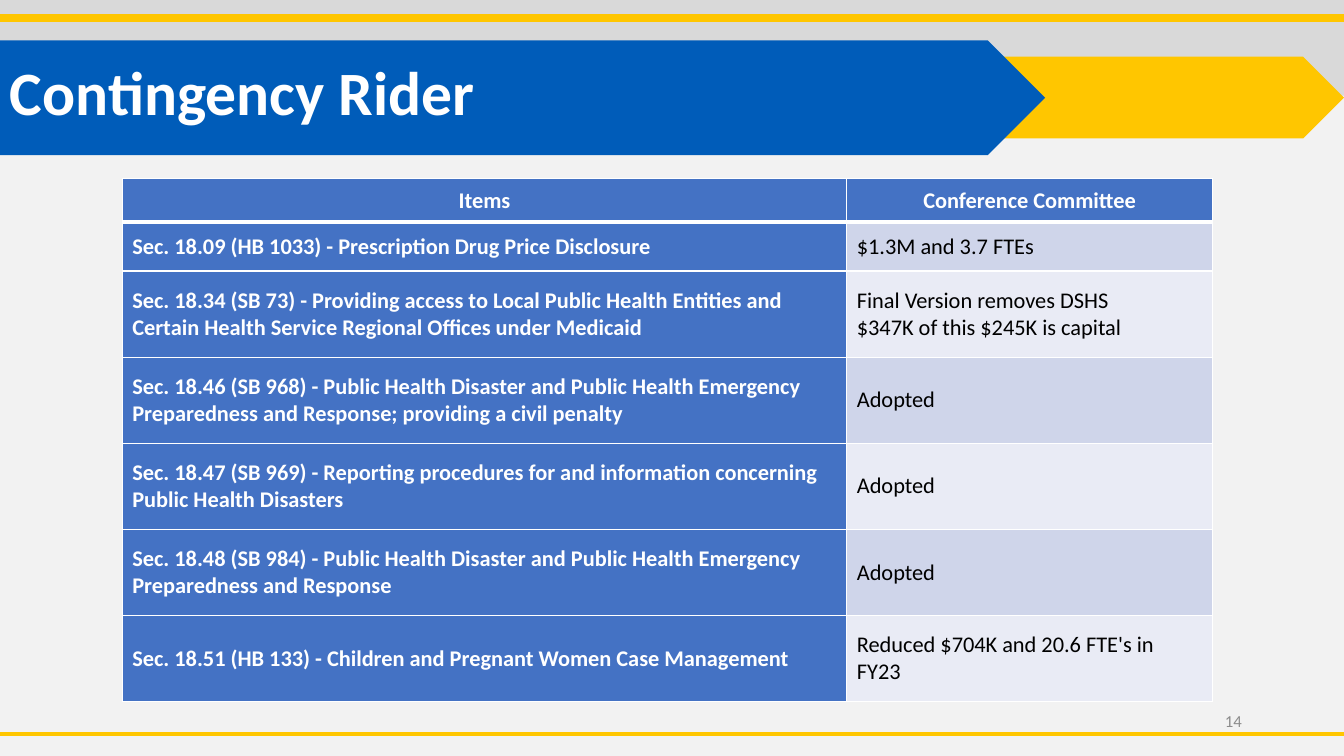
from lxml import etree
from pptx import Presentation
from pptx.dml import color
from pptx.enum import shapes, text
from pptx.oxml import ns
from pptx.util import Cm, Pt

WHITE, BLACK, GOLD, BLUE = "FFFFFF", "000000", "FFC600", "005CB9"
PALE, GREY, NUMBER_GREY = "F2F2F2", "D9D9D9", "8C8C8C"
HEADER, BANDS = "4472C4", ("CFD5EA", "E9EBF5")
WIDTH, HEIGHT = 33.87, 19.05
COLUMN_WIDTHS = (18.26, 9.22)
ROW_HEIGHTS = (1.09, 1.24) + (2.17,) * 5
HEADINGS = ("Items", "Conference Committee")
RIDERS = (
    ("Sec. 18.09 (HB 1033) - Prescription Drug Price Disclosure",
     "$1.3M and 3.7 FTEs"),
    ("Sec. 18.34 (SB 73) - Providing access to Local Public Health Entities and "
     "Certain Health Service Regional Offices under Medicaid",
     "Final Version removes DSHS\n$347K of this $245K is capital"),
    ("Sec. 18.46 (SB 968) - Public Health Disaster and Public Health Emergency "
     "Preparedness and Response; providing a civil penalty",
     "Adopted"),
    ("Sec. 18.47 (SB 969) - Reporting procedures for and information concerning "
     "Public Health Disasters",
     "Adopted"),
    ("Sec. 18.48 (SB 984) - Public Health Disaster and Public Health Emergency "
     "Preparedness and Response",
     "Adopted"),
    ("Sec. 18.51 (HB 133) - Children and Pregnant Women Case Management",
     "Reduced $704K and 20.6 FTE's in FY23"),
)


def paint(target, colour):
    target.solid()
    target.fore_color.rgb = color.RGBColor.from_string(colour)


def write(frame, words, size, colour, bold=False, align=text.PP_ALIGN.LEFT):
    frame.text = words
    frame.word_wrap = True
    for paragraph in frame.paragraphs:
        paragraph.alignment = align
        for run in paragraph.runs:
            run.font.name = "Calibri"
            run.font.size = Pt(size)
            run.font.bold = bold
            paint(run.font.fill, colour)


def add_band(slide, kind, left, top, width, height, colour):
    band = slide.shapes.add_shape(kind, Cm(left), Cm(top), Cm(width), Cm(height))
    band.shadow.inherit = False
    paint(band.fill, colour)
    band.line.fill.background()


def add_rule(slide, y, weight):
    rule = slide.shapes.add_connector(
        shapes.MSO_CONNECTOR.STRAIGHT, Cm(0), Cm(y), Cm(WIDTH), Cm(y))
    paint(rule.line.fill, GOLD)
    rule.line.width = Pt(weight)
    etree.SubElement(rule._element.spPr, ns.qn("a:effectLst"))


def add_label(slide, left, top, width, height, words, size, colour, **style):
    label = slide.shapes.add_textbox(Cm(left), Cm(top), Cm(width), Cm(height))
    frame = label.text_frame
    write(frame, words, size, colour, **style)
    frame.vertical_anchor = text.MSO_ANCHOR.MIDDLE
    return frame


def add_borders(cell, bottom):
    properties = cell._tc.get_or_add_tcPr()
    weights = {"lnL": 1, "lnR": 1, "lnT": 1, "lnB": bottom}
    for position, (side, weight) in enumerate(weights.items()):
        edge = etree.Element(ns.qn(f"a:{side}"), w=str(Pt(weight)))
        fill = etree.SubElement(edge, ns.qn("a:solidFill"))
        etree.SubElement(fill, ns.qn("a:srgbClr"), val=WHITE)
        properties.insert(position, edge)


def fill_cell(cell, words, fill, colour, bold, align=text.PP_ALIGN.LEFT, bottom=1):
    write(cell.text_frame, words, 16, colour, bold, align)
    cell.vertical_anchor = text.MSO_ANCHOR.MIDDLE
    paint(cell.fill, fill)
    add_borders(cell, bottom)


def add_riders(slide):
    riders = slide.shapes.add_table(
        len(ROW_HEIGHTS), len(COLUMN_WIDTHS), Cm(3.08), Cm(4.5),
        Cm(sum(COLUMN_WIDTHS)), Cm(sum(ROW_HEIGHTS))).table
    for column, width in zip(riders.columns, COLUMN_WIDTHS):
        column.width = Cm(width)
    for row, height in zip(riders.rows, ROW_HEIGHTS):
        row.height = Cm(height)
    for column, heading in enumerate(HEADINGS):
        cell = riders.cell(0, column)
        fill_cell(cell, heading, HEADER, WHITE, True, text.PP_ALIGN.CENTER, 3)
        cell.margin_left = cell.margin_right = cell.margin_top = Cm(0.03)
        cell.margin_bottom = Cm(0)
    for row, (item, decision) in enumerate(RIDERS, 1):
        fill_cell(riders.cell(row, 0), item, HEADER, WHITE, True,
                  bottom=1)
        fill_cell(riders.cell(row, 1), decision, BANDS[(row - 1) % 2], BLACK, False)
    for column in range(len(HEADINGS)):
        first_edge = riders.cell(1, column)._tc.tcPr.find(ns.qn("a:lnT"))
        first_edge.set("w", str(Pt(3)))


def main():
    deck = Presentation()
    deck.slide_width, deck.slide_height = Cm(WIDTH), Cm(HEIGHT)
    slide = deck.slides.add_slide(deck.slide_layouts[6])
    paint(slide.background.fill, PALE)
    arrow = shapes.MSO_SHAPE.PENTAGON
    add_band(slide, shapes.MSO_SHAPE.RECTANGLE, 0, 0, WIDTH, 2.41, GREY)
    add_band(slide, arrow, 18, 1.43, 15.87, 2.06, GOLD)
    add_band(slide, arrow, 0, 1.02, 26.34, 2.89, BLUE)
    add_rule(slide, 18.49, 3)
    add_rule(slide, 0.45, 6)
    title = add_label(slide, 0, 0.58, 29.21, 3.68, "Contingency Rider", 44, WHITE,
                      bold=True)
    title.paragraphs[0].line_spacing = 0.9
    add_riders(slide)
    add_label(slide, 23.93, 17.65, 7.62, 1.02, "14", 12, NUMBER_GREY,
              align=text.PP_ALIGN.RIGHT)
    deck.save("out.pptx")


if __name__ == "__main__":
    main()
